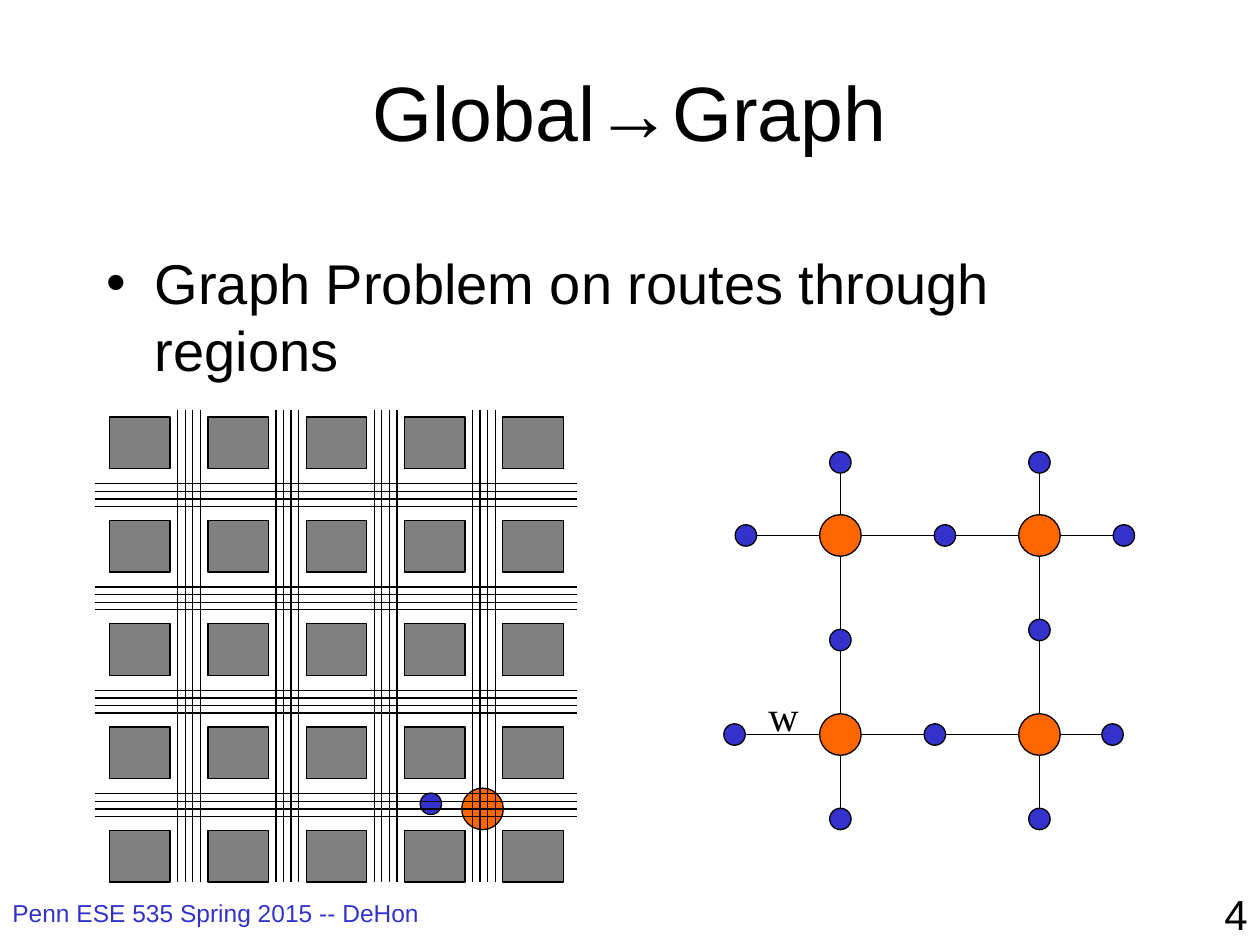
from lxml.etree import SubElement
from pptx import Presentation
from pptx.dml.color import RGBColor
from pptx.enum.shapes import MSO_CONNECTOR, MSO_SHAPE
from pptx.enum.text import MSO_ANCHOR, MSO_AUTO_SIZE, PP_ALIGN
from pptx.oxml.ns import qn
from pptx.util import Inches, Pt

BLACK, BLUE, ORANGE, GRAY = "000000", "3333CC", "FF6600", "808080"
NODE_SIZE, SWITCH_SIZE = 0.17, 0.33
GRID_COUNT = 5
COLUMN_PITCH, ROW_PITCH = 0.78, 0.82
TRACK_COUNT, TRACK_GAP = 4, 0.06


def color(value):
    return RGBColor.from_string(value)


def add_text(slide, text, left, top, width, height, size, font="Arial",
             fill=BLACK, align=PP_ALIGN.LEFT, anchor=MSO_ANCHOR.TOP, wrap=True):
    shape = slide.shapes.add_textbox(
        Inches(left), Inches(top), Inches(width), Inches(height))
    text_frame = shape.text_frame
    text_frame.text = text
    text_frame.word_wrap = wrap
    text_frame.vertical_anchor = anchor
    paragraph = text_frame.paragraphs[0]
    paragraph.alignment = align
    run_font = paragraph.runs[0].font
    run_font.name = font
    run_font.size = Pt(size)
    run_font.color.rgb = color(fill)
    return shape


def add_bullet(paragraph, indent):
    properties = paragraph._p.get_or_add_pPr()
    properties.set("marL", str(Inches(indent)))
    properties.set("indent", str(Inches(-indent)))
    SubElement(properties, qn("a:buFont"), typeface="Arial")
    SubElement(properties, qn("a:buChar"), char="•")


def add_figure(shapes, kind, left, top, width, height, fill):
    shape = shapes.add_shape(
        kind, Inches(left), Inches(top), Inches(width), Inches(height))
    shape.shadow.inherit = False
    shape.fill.solid()
    shape.fill.fore_color.rgb = color(fill)
    shape.line.color.rgb = color(BLACK)
    shape.line.width = Pt(0.75)


def add_circle(shapes, center_x, center_y, size, fill):
    add_figure(shapes, MSO_SHAPE.OVAL, center_x - size / 2,
               center_y - size / 2, size, size, fill)


def add_line(shapes, start_x, start_y, end_x, end_y):
    connector = shapes.add_connector(
        MSO_CONNECTOR.STRAIGHT, Inches(start_x), Inches(start_y),
        Inches(end_x), Inches(end_y))
    connector.line.color.rgb = color(BLACK)
    connector.line.width = Pt(0.75)
    SubElement(connector._element.spPr, qn("a:effectLst"))


def add_routing_grid(slide):
    shapes = slide.shapes.add_group_shape().shapes
    for row in range(GRID_COUNT):
        for column in range(GRID_COUNT):
            add_figure(shapes, MSO_SHAPE.RECTANGLE, 0.87 + column * COLUMN_PITCH,
                       3.31 + row * ROW_PITCH, 0.48, 0.41, GRAY)
    for channel in range(GRID_COUNT - 1):
        for track in range(TRACK_COUNT):
            x = 1.41 + channel * COLUMN_PITCH + track * TRACK_GAP
            add_line(shapes, x, 3.25, x, 7)
    for channel in range(GRID_COUNT - 1):
        for track in range(TRACK_COUNT):
            y = 3.84 + channel * ROW_PITCH + track * TRACK_GAP
            add_line(shapes, 0.75, y, 4.58, y)


def add_graph_edges(slide):
    for edge in [(5.92, 5.83, 8.92, 5.83), (6, 4.25, 9, 4.25),
                 (8.25, 6.42, 8.25, 3.58), (6.67, 6.5, 6.67, 3.67)]:
        add_line(slide.shapes, *edge)


def add_graph_nodes(slide):
    for y in (4.25, 5.83):
        for x in (6.67, 8.25):
            add_circle(slide.shapes, x, y, SWITCH_SIZE, ORANGE)
    channels = [(5.92, 4.25), (7.5, 4.25), (8.92, 4.25),
                (5.83, 5.83), (7.42, 5.83), (8.83, 5.83),
                (6.67, 3.67), (6.67, 5.08), (6.67, 6.5),
                (8.25, 3.67), (8.25, 5), (8.25, 6.5)]
    for x, y in channels:
        add_circle(slide.shapes, x, y, NODE_SIZE, BLUE)


def main():
    presentation = Presentation()
    presentation.slide_width = Inches(10)
    presentation.slide_height = Inches(7.5)
    slide = presentation.slides.add_slide(presentation.slide_layouts[6])

    add_text(slide, "Penn ESE 535 Spring 2015 -- DeHon", 0, 7.08, 3.83, 0.42,
             14, fill=BLUE)
    add_text(slide, "4", 7.92, 7, 2.08, 0.5, 24, align=PP_ALIGN.RIGHT)
    add_circle(slide.shapes, 3.42, 6.38, NODE_SIZE, BLUE)
    add_circle(slide.shapes, 3.83, 6.42, SWITCH_SIZE, ORANGE)
    add_graph_edges(slide)
    add_text(slide, "Global→Graph", 0.75, 0.25, 8.5, 1.25, 44,
             align=PP_ALIGN.CENTER, anchor=MSO_ANCHOR.MIDDLE)
    body = add_text(slide, "Graph Problem on routes through regions",
                    0.75, 1.92, 8.5, 4.5, 32)
    add_bullet(body.text_frame.paragraphs[0], 0.38)
    add_graph_nodes(slide)
    weight = add_text(slide, "w", 6, 5.42, 0.44, 0.5, 24,
                      font="Times New Roman", wrap=False)
    weight.text_frame.auto_size = MSO_AUTO_SIZE.SHAPE_TO_FIT_TEXT
    add_routing_grid(slide)
    presentation.save("out.pptx")


if __name__ == "__main__":
    main()
